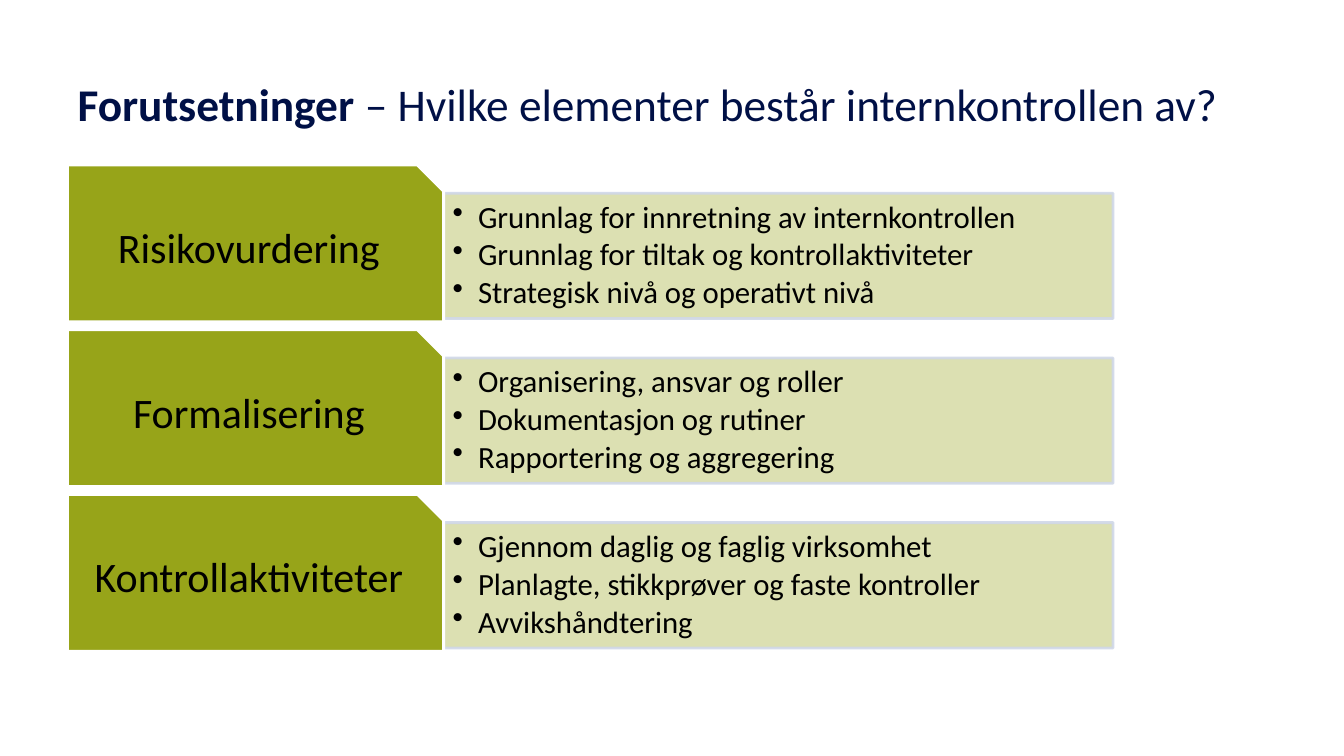
import pptx
import pptx.util
import pptx.dml.color
import pptx.enum.shapes
import pptx.enum.text
import pptx.oxml
import pptx.oxml.ns
import lxml.etree

Cm = pptx.util.Cm
Pt = pptx.util.Pt
SHAPES = pptx.enum.shapes.MSO_SHAPE
ALIGN = pptx.enum.text.PP_ALIGN
COLOURS = {"navy": "001046", "olive": "8C9B00", "mist": "D0D8E8",
           "white": "FFFFFF", "black": "000000"}

ELEMENTS = [
    ("Risikovurdering", ["Grunnlag for innretning av internkontrollen",
                         "Grunnlag for tiltak og kontrollaktiviteter",
                         "Strategisk nivå og operativt nivå"]),
    ("Formalisering", ["Organisering, ansvar og roller",
                       "Dokumentasjon og rutiner",
                       "Rapportering og aggregering"]),
    ("Kontrollaktiviteter", ["Gjennom daglig og faglig virksomhet",
                             "Planlagte, stikkprøver og faste kontroller",
                             "Avvikshåndtering"]),
]


class ControlSlide:
    font_name = "Calibri"

    def __init__(self, deck):
        self.page = deck.slides.add_slide(deck.slide_layouts[5])

    def colour(self, name):
        return pptx.dml.color.RGBColor.from_string(COLOURS[name])

    def style(self, font, size, colour):
        font.name = self.font_name
        font.size = Pt(size)
        font.color.rgb = self.colour(colour)

    def fade(self, fill, percent):
        tint = fill._xPr.find(".//" + pptx.oxml.ns.qn("a:srgbClr"))
        alpha = lxml.etree.SubElement(tint, pptx.oxml.ns.qn("a:alpha"))
        alpha.set("val", str(percent * 1000))

    def title(self, lead, rest):
        box = self.page.shapes.title
        box.left, box.top, box.width, box.height = Cm(1.7), Cm(1.02), Cm(30.48), Cm(3.15)
        frame = box.text_frame
        frame.auto_size = pptx.enum.text.MSO_AUTO_SIZE.NONE
        frame.vertical_anchor = pptx.enum.text.MSO_ANCHOR.MIDDLE
        para = frame.paragraphs[0]
        para.alignment = ALIGN.LEFT
        self.style(para.font, 32.4, "navy")
        for text, bold in ((lead, True), (rest, False)):
            span = para.add_run()
            span.text = text
            span.font.bold = bold

    def panel(self, kind, area, opacity, border, insets):
        box = self.page.shapes.add_shape(kind, *map(Cm, area))
        box.shadow.inherit = False
        box.fill.solid()
        box.fill.fore_color.rgb = self.colour("olive")
        self.fade(box.fill, opacity)
        box.line.color.rgb = self.colour(border)
        box.line.width = Pt(2)
        frame = box.text_frame
        frame.word_wrap = True
        frame.vertical_anchor = pptx.enum.text.MSO_ANCHOR.MIDDLE
        frame.margin_left = frame.margin_right = Cm(insets[0])
        frame.margin_top = frame.margin_bottom = Cm(insets[1])
        return box

    def label(self, text, area):
        box = self.panel(SHAPES.SNIP_1_RECTANGLE, area, 90, "white", (0.3, 0.15))
        para = box.text_frame.paragraphs[0]
        para.text = text
        para.alignment = ALIGN.CENTER
        para.line_spacing = 0.9
        self.style(para.font, 30, "black")

    def points(self, items, area):
        box = self.panel(SHAPES.RECTANGLE, area, 30, "mist", (0.23, 0.13))
        self.fade(box.line.fill, 90)
        frame = box.text_frame
        for index, item in enumerate(items):
            para = frame.add_paragraph() if index else frame.paragraphs[0]
            para.text = item
            para.alignment = ALIGN.LEFT
            para.line_spacing = 0.9
            para.space_after = Pt(3.3)
            properties = para._p.get_or_add_pPr()
            properties.set("marL", str(Cm(0.64)))
            properties.set("indent", str(-Cm(0.64)))
            bullet = lxml.etree.SubElement(properties, pptx.oxml.ns.qn("a:buChar"))
            bullet.set("char", "•")
            self.style(para.font, 22, "black")


def main():
    deck = pptx.Presentation()
    deck.slide_width, deck.slide_height = Cm(33.87), Cm(19.05)
    slide = ControlSlide(deck)
    slide.title("Forutsetninger", " – Hvilke elementer består internkontrollen av?")
    left, first_top, pitch, label_width = 1.7, 4.16, 4.15, 9.48
    for row, (name, items) in enumerate(ELEMENTS):
        top = first_top + row * pitch
        slide.points(items, (left + label_width, top + 0.71, 16.87, 3.16))
        slide.label(name, (left, top, label_width, 3.95))
    deck.save("out.pptx")


if __name__ == "__main__":
    main()
